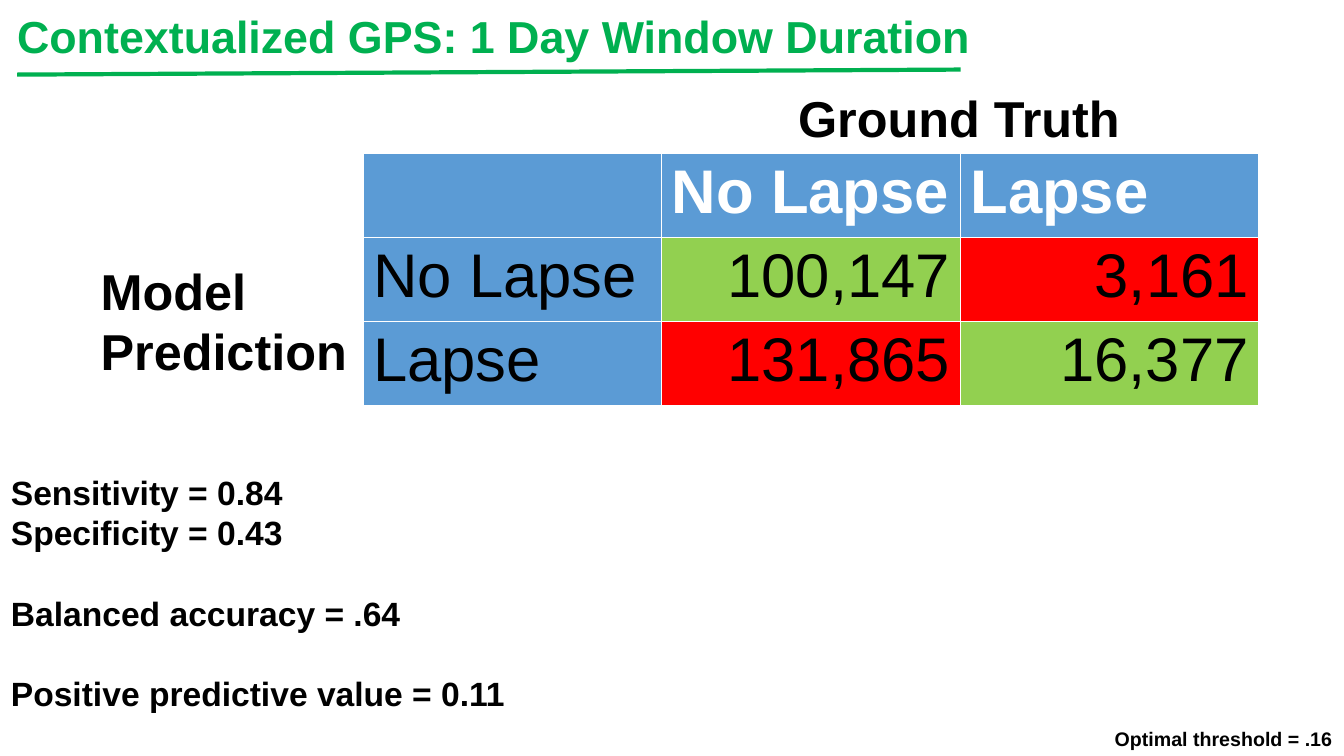
from lxml.etree import SubElement
from pptx import Presentation
from pptx.dml.color import RGBColor
from pptx.enum.shapes import MSO_CONNECTOR
from pptx.enum.text import MSO_ANCHOR, MSO_AUTO_SIZE, PP_ALIGN
from pptx.oxml.ns import qn
from pptx.util import Pt

BLACK = RGBColor(0x00, 0x00, 0x00)
WHITE = RGBColor(0xFF, 0xFF, 0xFF)
TITLE_GREEN = RGBColor(0x00, 0xB0, 0x50)
LABEL_BLUE = RGBColor(0x5B, 0x9B, 0xD5)
CORRECT_GREEN = RGBColor(0x92, 0xD0, 0x50)
ERROR_RED = RGBColor(0xFF, 0x00, 0x00)


def style_paragraph(para, size, color, bold=True):
    para.font.name = "Arial"
    para.font.size = Pt(size)
    para.font.bold = bold
    para.font.color.rgb = color


def fill_box(box, position, lines, size, color=BLACK, wrap=False, gaps=()):
    box.left, box.top, box.width, box.height = [Pt(value) for value in position]
    frame = box.text_frame
    frame.text = "\n".join(lines)
    frame.word_wrap = wrap
    frame.auto_size = MSO_AUTO_SIZE.SHAPE_TO_FIT_TEXT
    frame.vertical_anchor = MSO_ANCHOR.TOP
    for index, para in enumerate(frame.paragraphs):
        para.alignment = PP_ALIGN.LEFT
        para.line_spacing = Pt(size * 1.2)
        para.space_before = Pt(size * 1.2 if index in gaps else 0)
        style_paragraph(para, size, color)


deck = Presentation()
deck.slide_width = Pt(960)
deck.slide_height = Pt(540)
page = deck.slides.add_slide(deck.slide_layouts[5])

fill_box(page.shapes.title, (5, 2.9, 936, 46),
         ["Contextualized GPS: 1 Day Window Duration"], 32, TITLE_GREEN, wrap=True)

underline = page.shapes.add_connector(
    MSO_CONNECTOR.STRAIGHT, Pt(12.2), Pt(53.3), Pt(686.2), Pt(49.7))
underline.line.color.rgb = TITLE_GREEN
underline.line.width = Pt(3)
SubElement(underline._element.spPr, qn("a:effectLst"))

confusion_rows = [
    ["", "No Lapse", "Lapse"],
    ["No Lapse", "100,147", "3,161"],
    ["Lapse", "131,865", "16,377"],
]
row_height = 56.3
matrix = page.shapes.add_table(
    3, 3, Pt(259.4), Pt(109.4), Pt(640), Pt(3 * row_height)).table
matrix.horz_banding = False
for row, texts in enumerate(confusion_rows):
    matrix.rows[row].height = Pt(row_height)
    for column, text in enumerate(texts):
        cell = matrix.cell(row, column)
        cell.text = text
        is_label = row == 0 or column == 0
        cell.fill.solid()
        if is_label:
            cell.fill.fore_color.rgb = LABEL_BLUE
        else:
            cell.fill.fore_color.rgb = CORRECT_GREEN if row == column else ERROR_RED
        para = cell.text_frame.paragraphs[0]
        para.alignment = PP_ALIGN.LEFT if is_label else PP_ALIGN.RIGHT
        style_paragraph(para, 44, WHITE if row == 0 else BLACK, bold=row == 0)

metrics = [
    "Sensitivity = 0.84",
    "Specificity = 0.43",
    "Balanced accuracy = .64",
    "Positive predictive value = 0.11",
]
text_boxes = [
    ((563, 59, 247, 51), ["Ground Truth"], 36, False, ()),
    ((64.8, 182.2, 192.2, 94.3), ["Model", "Prediction"], 36, False, ()),
    ((0.7, 333.4, 918, 181.4), metrics, 24, True, (2, 3)),
    ((789.1, 515.5, 170.6, 24.5), ["Optimal threshold = .16"], 14, False, ()),
]
for position, lines, size, wrap, gaps in text_boxes:
    box = page.shapes.add_textbox(0, 0, 0, 0)
    fill_box(box, position, lines, size, wrap=wrap, gaps=gaps)

deck.save("out.pptx")
